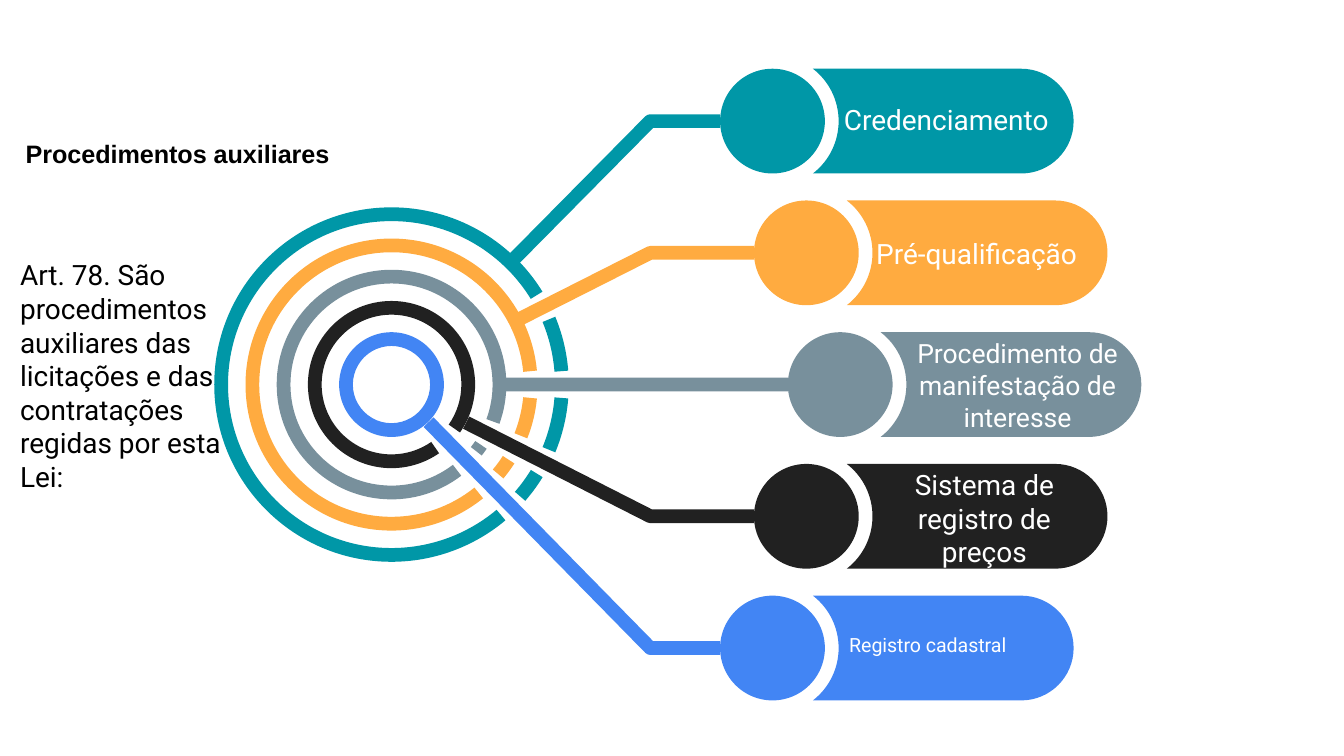
from math import asin, atan2, ceil, cos, degrees, floor, radians, sin, tan

from pptx import Presentation
from pptx.dml.color import RGBColor
from pptx.enum.shapes import MSO_SHAPE as Shape
from pptx.enum.text import MSO_ANCHOR as Anchor, MSO_AUTO_SIZE as AutoSize, PP_ALIGN as Align
from pptx.oxml.ns import qn
from pptx.util import Cm, Pt

COLORS = {
    "teal": "0097A7", "orange": "FFAB40", "gray": "78909C", "dark": "212121",
    "blue": "4285F4", "white": "FFFFFF", "black": "000000",
}
CX, CY = 7.4, 7.27
ROW_STEP, ROW_SHIFT = 2.49, 0.64
DISC_X, DISC_R = 15.88, 0.99
NOTCH_R, CAP_DX = 1.25, 4.7
RING_STEP, BAND = 0.59, 0.26
BEND_X = 12.29

ROWS = [
    ("teal", (9.73, 4.88), [(-22.5, -4.5), (4.5, 22.5), (31.5, 41), (50, 328.4)]),
    ("orange", (9.84, 6.02), [(5.5, 21.6), (32.7, 40), (51.2, 354.5)]),
    ("gray", (9.55, 7.27), [(34, 38.2), (52.6, 380)]),
    ("dark", (8.81, 7.99), [(55.3, 395)]),
    ("blue", (8.1, 7.98), []),
]
LABELS = [
    ("Credenciamento", (15.95, 1.93, 4.09, 0.64), 15, False),
    ("Pré-qualificação", (16.56, 4.47, 4.04, 0.64), 15, False),
    ("Procedimento de manifestação de interesse", (17.07, 6.38, 4.32, 1.83), 14.2, True),
    ("Sistema de registro de preços", (16.89, 8.84, 3.43, 1.93), 15, True),
    ("Registro cadastral", (16.05, 11.96, 3.2, 0.46), 10.5, False),
]
ARTICLE = ("Art. 78. São procedimentos auxiliares das licitações e das "
           "contratações regidas por esta Lei:")


def rgb(name):
    return RGBColor.from_string(COLORS[name])


def polar(x, y, radius, angle):
    return x + radius * cos(radians(angle)), y + radius * sin(radians(angle))


def arc(x, y, radius, start, end):
    low, high = sorted((start, end))
    stops = [low, *range(90 * (floor(low / 90) + 1), ceil(high), 90), high]
    if start > end:
        stops.reverse()
    steps = [(polar(x, y, radius, start),)]
    for a, b in zip(stops, stops[1:]):
        pull = radius * 4 / 3 * tan(radians(b - a) / 4)
        p0, p1 = polar(x, y, radius, a), polar(x, y, radius, b)
        steps.append((polar(*p0, pull, a + 90), polar(*p1, -pull, b + 90), p1))
    return steps


def paint(sp, color):
    sp.shadow.inherit = False
    sp.fill.solid()
    sp.fill.fore_color.rgb = rgb(color)
    sp.line.fill.background()


def add_preset(s, kind, x, y, w, h, color):
    sp = s.shapes.add_shape(kind, Cm(x), Cm(y), Cm(w), Cm(h))
    paint(sp, color)
    return sp


def add_outline(s, contours, color):
    builder = None
    for steps in contours:
        first, *rest = [(Cm(x), Cm(y)) for step in steps for x, y in step]
        if builder:
            builder.move_to(*first)
        else:
            builder = s.shapes.build_freeform(*first)
        builder.add_line_segments(rest, close=True)
    sp = builder.convert_to_shape()
    lines = iter(list(sp._element.iter(qn("a:lnTo"))))
    for step in (step for steps in contours for step in steps[1:]):
        curve = next(lines)
        if len(step) == 3:
            curve.tag = qn("a:cubicBezTo")
            for line in (next(lines), next(lines)):
                curve.append(line[0])
                line.getparent().remove(line)
    paint(sp, color)


def add_pill(s, x, y, color):
    add_preset(s, Shape.OVAL, x - DISC_R, y - DISC_R, 2 * DISC_R, 2 * DISC_R, color)
    notch = degrees(asin(DISC_R / NOTCH_R))
    steps = arc(x, y, NOTCH_R, notch, -notch) + arc(x + CAP_DX, y, DISC_R, -90, 90)
    add_outline(s, [steps], color)


def add_band(s, start, y, end_x, color):
    x0, y0 = start
    half = BAND / 2
    if y0 == y:
        add_preset(s, Shape.RECTANGLE, x0, y - half, end_x - x0, BAND, color)
        return
    angle = degrees(atan2(y - y0, BEND_X - x0))
    side = 90 if angle > 0 else -90
    inner = polar(BEND_X, y, half / cos(radians(angle / 2)), angle / 2 - side)
    tail = [polar(end_x, y, half, side), polar(end_x, y, half, -side),
            inner, polar(x0, y0, half, angle - side)]
    steps = [(polar(x0, y0, half, angle + side),)]
    steps += arc(BEND_X, y, half, angle + side, side)
    steps += [(point,) for point in tail]
    add_outline(s, [steps], color)


def add_ring(s, radius, spans, color):
    if not spans:
        sp = add_preset(s, Shape.DONUT, CX - radius, CY - radius, 2 * radius, 2 * radius, color)
        sp.adjustments[0] = BAND / (2 * radius)
        return
    contours = [arc(CX, CY, radius, a, b) + arc(CX, CY, radius - BAND, b, a) for a, b in spans]
    add_outline(s, contours, color)


def set_text(sp, text, size, color, font="Roboto", bold=False, align=Align.LEFT, wrap=True):
    tf = sp.text_frame
    tf.word_wrap = wrap
    tf.auto_size = AutoSize.SHAPE_TO_FIT_TEXT
    tf.vertical_anchor = Anchor.TOP
    p = tf.paragraphs[0]
    p.alignment = align
    r = p.add_run()
    r.text = text
    r.font.size = Pt(size)
    r.font.name = font
    r.font.bold = bold
    r.font.color.rgb = rgb(color)


def add_title(s, text):
    sp = s.shapes.title
    sp.left, sp.top, sp.width, sp.height = Cm(0.23), Cm(2.49), Cm(12.7), Cm(0.84)
    set_text(sp, text, 13.5, "black", font="Arial", bold=True)


def add_label(s, text, box, size, wrap):
    sp = s.shapes.add_textbox(*map(Cm, box))
    tf = sp.text_frame
    tf.margin_left = tf.margin_top = tf.margin_right = tf.margin_bottom = 0
    set_text(sp, text, size, "white", align=Align.CENTER if wrap else Align.LEFT, wrap=wrap)


def main():
    prs = Presentation()
    prs.slide_width, prs.slide_height = Cm(25.4), Cm(14.29)
    s = prs.slides.add_slide(prs.slide_layouts[5])
    add_title(s, "Procedimentos auxiliares")
    for i, (color, start, spans) in enumerate(ROWS):
        x = DISC_X - ROW_SHIFT * abs(i - 2)
        y = CY + ROW_STEP * (i - 2)
        add_pill(s, x, y, color)
        add_band(s, start, y, x - DISC_R, color)
        add_ring(s, DISC_R + RING_STEP * (4 - i), spans, color)
    for label in LABELS:
        add_label(s, *label)
    article = s.shapes.add_textbox(Cm(0.13), Cm(4.75), Cm(4.42), Cm(4.75))
    set_text(article, ARTICLE, 15, "black")
    prs.save("out.pptx")


if __name__ == "__main__":
    main()
